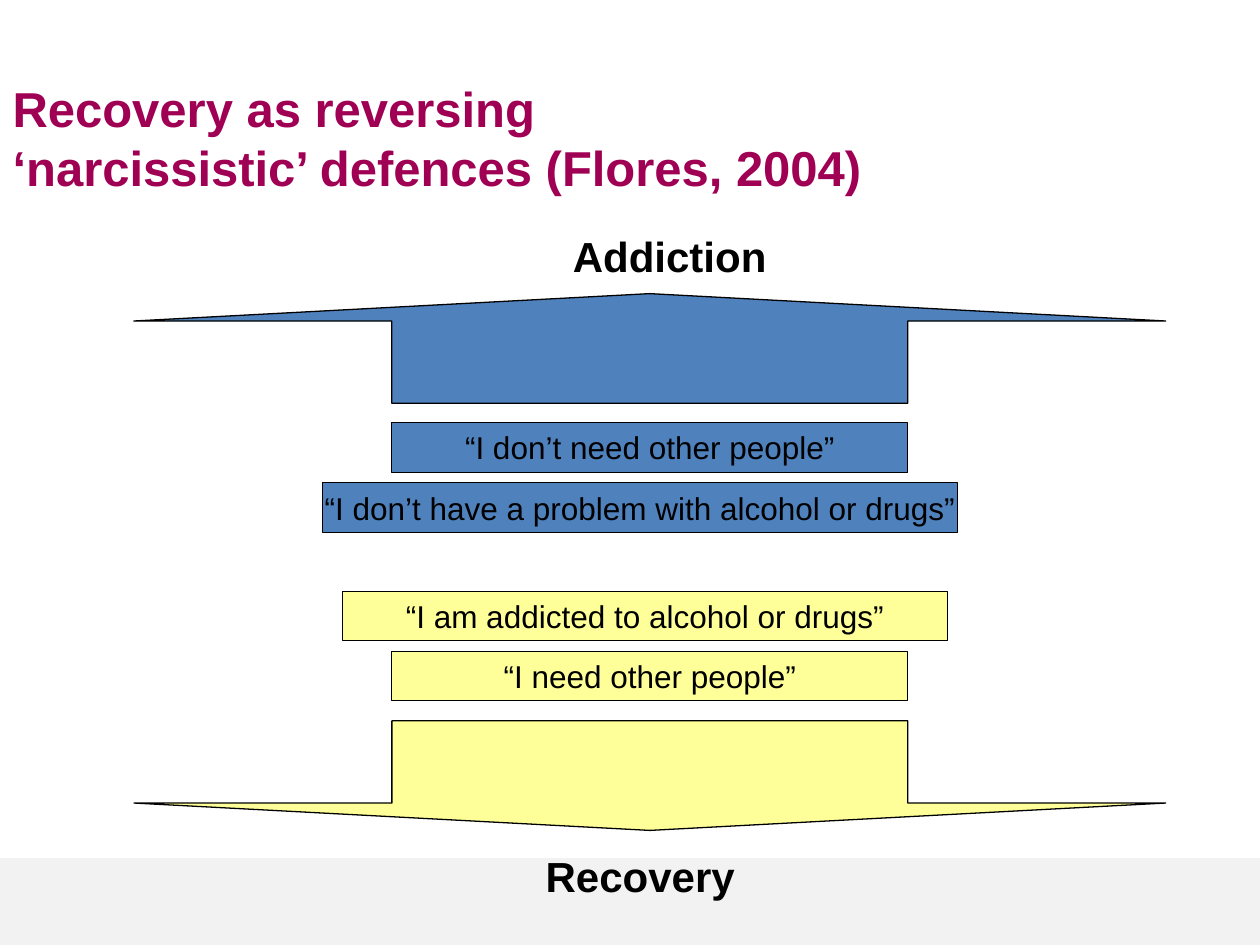
from dataclasses import dataclass

from pptx import Presentation
from pptx.dml.color import RGBColor
from pptx.enum.shapes import MSO_SHAPE as Shape
from pptx.enum.text import MSO_ANCHOR as Anchor, MSO_AUTO_SIZE as AutoSize, PP_ALIGN as Align
from pptx.util import Cm, Pt


@dataclass(frozen=True)
class Theme:
    font: str = "Arial"
    title_color: str = "A00054"
    ink: str = "000000"
    band: str = "F2F2F2"
    addiction: str = "4F81BD"
    recovery: str = "FFFF99"
    title_size: float = 28
    label_size: float = 24
    statement_size: float = 18
    outline: float = 0.75


THEME = Theme()


def style(paragraph, size, color, bold=False, align=Align.LEFT):
    paragraph.alignment = align
    font = paragraph.font
    font.name, font.size, font.bold = THEME.font, Pt(size), bold
    font.color.rgb = RGBColor.from_string(color)


def add_filled(slide, preset, box, fill, outlined=True):
    shape = slide.shapes.add_shape(preset, *map(Cm, box))
    shape.shadow.inherit = False
    shape.fill.solid()
    shape.fill.fore_color.rgb = RGBColor.from_string(fill)
    if outlined:
        shape.line.color.rgb = RGBColor.from_string(THEME.ink)
        shape.line.width = Pt(THEME.outline)
    else:
        shape.line.fill.background()
    return shape


def add_title(slide, box):
    title = slide.shapes.title
    title.left, title.top, title.width, title.height = map(Cm, box)
    frame = title.text_frame
    frame.text = "Recovery as reversing\v‘narcissistic’ defences (Flores, 2004)"
    frame.word_wrap = True
    frame.auto_size = AutoSize.NONE
    frame.vertical_anchor = Anchor.TOP
    style(frame.paragraphs[0], THEME.title_size, THEME.title_color, bold=True)


def add_statement(slide, box, wording, fill):
    statement = add_filled(slide, Shape.RECTANGLE, box, fill)
    frame = statement.text_frame
    frame.text = wording
    frame.word_wrap = False
    frame.vertical_anchor = Anchor.MIDDLE
    style(frame.paragraphs[0], THEME.statement_size, THEME.ink, align=Align.CENTER)


def add_label(slide, box, wording):
    label = slide.shapes.add_textbox(*map(Cm, box))
    frame = label.text_frame
    frame.text = wording
    frame.word_wrap = False
    frame.auto_size = AutoSize.SHAPE_TO_FIT_TEXT
    style(frame.paragraphs[0], THEME.label_size, THEME.ink, bold=True)


def add_direction(slide, box, fill, heading, heading_box, arrow_top, rotation,
                  statements_top, statements):
    left, top, width, _ = box
    arrow = add_filled(slide, Shape.UP_ARROW, (left, top + arrow_top, width, 2.21), fill)
    arrow.adjustments[0], arrow.adjustments[1] = 0.5, 0.25
    arrow.rotation = rotation

    x, y, label_width = heading_box
    add_label(slide, (left + x, top + y, label_width, 1.27), heading)

    for row, (wording, indent, statement_width) in enumerate(statements):
        statement_top = top + statements_top + row * 1.21
        add_statement(slide, (left + indent, statement_top, statement_width, 1), wording, fill)


def main():
    deck = Presentation()
    deck.slide_width, deck.slide_height = Cm(25.4), Cm(19.05)
    slide = deck.slides.add_slide(deck.slide_layouts[5])

    add_filled(slide, Shape.RECTANGLE, (0, 17.3, 25.4, 1.75), THEME.band, outlined=False)
    add_title(slide, (0, 1.45, 21.59, 1.88))
    add_direction(
        slide, (2.7, 4.52, 20.8, 6.22), THEME.addiction, "Addiction", (8.6, 0, 4.42),
        arrow_top=1.4, rotation=0, statements_top=4,
        statements=[
            ("“I don’t need other people”", 5.2, 10.4),
            ("“I don’t have a problem with alcohol or drugs”", 3.8, 12.8),
        ],
    )
    add_direction(
        slide, (2.7, 11.92, 20.8, 6.37), THEME.recovery, "Recovery", (8.05, 5.1, 4.32),
        arrow_top=2.61, rotation=180, statements_top=0,
        statements=[
            ("“I am addicted to alcohol or drugs”", 4.2, 12.2),
            ("“I need other people”", 5.2, 10.4),
        ],
    )
    deck.save("out.pptx")


if __name__ == "__main__":
    main()
